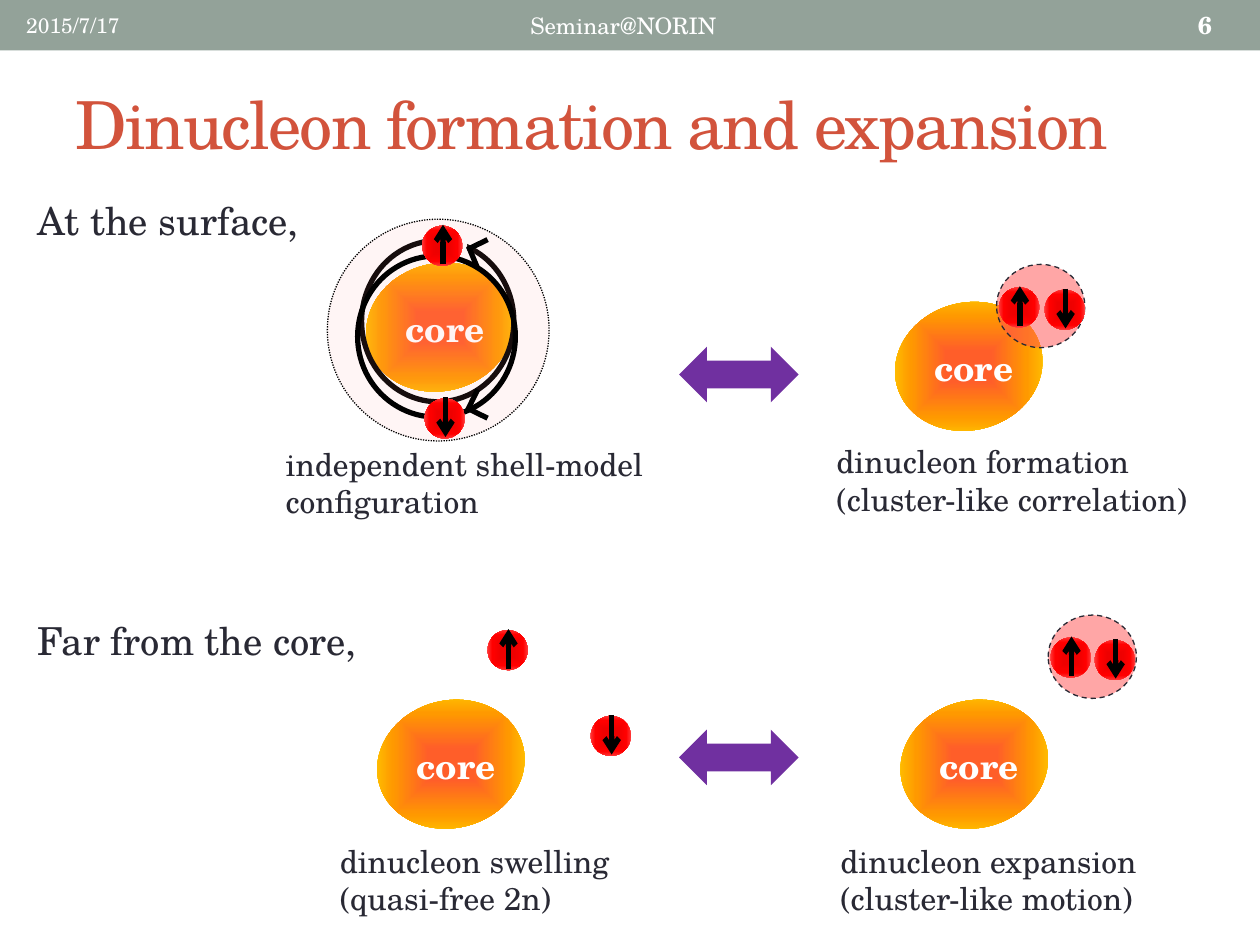
"""Build the slide on dinucleon formation and expansion."""
from lxml import etree
from pptx import Presentation
from pptx.dml.color import RGBColor
from pptx.enum.dml import MSO_LINE
from pptx.enum.shapes import MSO_CONNECTOR, MSO_SHAPE
from pptx.enum.text import MSO_ANCHOR, MSO_AUTO_SIZE, PP_ALIGN
from pptx.oxml import parse_xml
from pptx.oxml.ns import nsdecls, qn
from pptx.util import Cm, Pt

RECT, OVAL, ARROW = MSO_SHAPE.RECTANGLE, MSO_SHAPE.OVAL, MSO_SHAPE.LEFT_RIGHT_ARROW
STRAIGHT = MSO_CONNECTOR.STRAIGHT
DOT, DASH = MSO_LINE.ROUND_DOT, MSO_LINE.DASH
TOP, MIDDLE = MSO_ANCHOR.TOP, MSO_ANCHOR.MIDDLE
LEFT, CENTER = PP_ALIGN.LEFT, PP_ALIGN.CENTER
NO_FIT = MSO_AUTO_SIZE.NONE

FONT = "TeX Gyre Schola"
WHITE = RGBColor(0xFF, 0xFF, 0xFF)
BLACK = RGBColor(0x00, 0x00, 0x00)
INK = RGBColor(0x29, 0x29, 0x34)
SAGE = RGBColor(0x93, 0xA2, 0x99)
RUST = RGBColor(0xD2, 0x53, 0x3C)
PURPLE = RGBColor(0x70, 0x30, 0xA0)
PALE_PINK = RGBColor(0xFF, 0x93, 0x93)
PINK = RGBColor(0xFF, 0x4F, 0x4F)
CORE_STOPS = [(19, RGBColor(0xFF, 0x5E, 0x29)), (63, RGBColor(0xFF, 0x99, 0x00)),
              (93, RGBColor(0xFF, 0xCC, 0x00))]
NUCLEON_STOPS = [(25, RGBColor(0xEE, 0x00, 0x00)), (59, RGBColor(0xFF, 0x00, 0x00)),
                 (91, RGBColor(0xFF, 0x61, 0x61))]

prs = Presentation()
prs.slide_width, prs.slide_height = Cm(25.4), Cm(19.05)
s = prs.slides.add_slide(prs.slide_layouts[5])


def add_shape(kind, box, fill=None, line=None, alpha=None, stops=None, rotation=0):
    sp = s.shapes.add_shape(kind, *map(Cm, box))
    sp.shadow.inherit = False
    sp.rotation = rotation
    if fill is None:
        sp.fill.background()
    else:
        sp.fill.solid()
        sp.fill.fore_color.rgb = fill
    if alpha:
        color = sp.element.spPr.find(".//" + qn("a:srgbClr"))
        etree.SubElement(color, qn("a:alpha"), val=str(alpha * 1000))
    if stops:
        gs = "".join(f'<a:gs pos="{pos * 1000}"><a:srgbClr val="{rgb}"/></a:gs>'
                     for pos, rgb in stops)
        sp.element.spPr.replace(sp.element.spPr.find(qn("a:noFill")), parse_xml(
            f'<a:gradFill {nsdecls("a")} rotWithShape="1"><a:gsLst>{gs}</a:gsLst>'
            '<a:path path="shape"><a:fillToRect l="50000" t="50000" r="50000" b="50000"/>'
            '</a:path></a:gradFill>'))
    if line:
        color, width, dash = line
        sp.line.color.rgb = color
        sp.line.width = Pt(width)
        sp.line.dash_style = dash
    else:
        sp.line.fill.background()


def write(sp, lines, size, color, anchor=TOP, align=LEFT, bold=False):
    tf = sp.text_frame
    for key, value in {"word_wrap": True, "auto_size": NO_FIT,
                       "vertical_anchor": anchor}.items():
        setattr(tf, key, value)
    tf.text = "\n".join(lines)
    for p in tf.paragraphs:
        p.alignment = align
        r = p.runs[0]
        r.font.color.rgb = color
        for key, value in {"name": FONT, "size": Pt(size), "bold": bold}.items():
            setattr(r.font, key, value)


add_shape(RECT, (0, 0, 25.4, 1.02), SAGE)

title = s.shapes.title
for key, value in {"left": 1.27, "top": 1.12, "width": 22.86, "height": 2.74}.items():
    setattr(title, key, Cm(value))
write(title, ["Dinucleon formation and expansion"], 37.8, RUST, MIDDLE)
title.text_frame.paragraphs[0].runs[0].font._element.set("spc", "-100")

for x, width, text, size, align, bold in [
        (0.28, 3.33, "2015/7/17", 12, LEFT, False),
        (5.11, 14.91, "Seminar@NORIN", 13, CENTER, False),
        (23.9, 1.14, "6", 14, LEFT, True)]:
    sp = s.shapes.add_textbox(Cm(x), Cm(0.05), Cm(width), Cm(0.91))
    write(sp, [text], size, WHITE, MIDDLE, align, bold)

for y, text in [(3.84, "At the surface,"), (12.32, "Far from the core,")]:
    sp = s.shapes.add_textbox(Cm(0.51), Cm(y), Cm(7.54), Cm(1.19))
    write(sp, [text], 22, INK)

for x, y, lines in [
        (5.51, 8.84, ["independent shell-model configuration"]),
        (16.61, 8.79, ["dinucleon formation", "(cluster-like correlation)"]),
        (6.6, 16.84, ["dinucleon swelling", "(quasi-free 2n)"]),
        (16.69, 16.84, ["dinucleon expansion", "(cluster-like motion)"])]:
    sp = s.shapes.add_textbox(Cm(x), Cm(y), Cm(8.45), Cm(1.8))
    write(sp, lines, 18, INK)

for y in (6.99, 14.71):
    add_shape(ARROW, (13.69, y, 2.41, 1.12), PURPLE)

strokes = [(9.83, 4.83, 9.42, 5.03, False), (9.45, 4.98, 9.63, 5.41, False),
           (9.83, 8.43, 9.42, 8.23, False), (9.42, 8.28, 9.63, 7.85, False)]
spins = []

add_shape(RECT, (8.89, 4.78, 0.53, 0.3), WHITE)
for x, y in [(7.37, 5.31), (18.03, 6.1), (7.59, 14.12), (18.14, 14.12)]:
    add_shape(OVAL, (x, y, 3, 2.57), stops=CORE_STOPS, rotation=345.1)
    sp = s.shapes.add_textbox(Cm(x + 0.55), Cm(y + 0.76), Cm(2.41), Cm(0.99))
    write(sp, ["core"], 20, WHITE, bold=True)

add_shape(OVAL, (7.29, 4.85, 3.07, 3.25), line=(BLACK, 3, None))
for gap in [(8.48, 8.26, 0.3, 0.64), (9.17, 8.28, 0.25, 0.46),
            (8.53, 4.37, 0.28, 0.64), (9.14, 4.45, 0.28, 0.64)]:
    add_shape(RECT, gap, WHITE)
add_shape(OVAL, (6.6, 4.42, 4.47, 4.47), PALE_PINK, (BLACK, 0.75, DOT), alpha=9)
add_shape(OVAL, (7.21, 5.16, 3.18, 3.25), line=(BLACK, 3, None))

for x, y in [(20.09, 5.33), (21.13, 12.4)]:
    add_shape(OVAL, (x, y, 1.78, 1.68), PINK, (INK, 0.75, DASH), alpha=50)

for x, y, up in [(8.51, 4.55, True), (8.56, 8.03, False),
                 (20.14, 5.79, True), (21.06, 5.84, False),
                 (9.83, 12.7, True), (11.91, 14.43, False),
                 (21.18, 12.85, True), (22.07, 12.9, False)]:
    add_shape(OVAL, (x, y, 0.81, 0.81), stops=NUCLEON_STOPS, rotation=248.3)
    ends = (y + 0.78, y - 0.02) if up else (y - 0.02, y + 0.78)
    spins.append((x + 0.42, ends[0], x + 0.42, ends[1], True))

for *ends, pointed in strokes + spins:
    c = s.shapes.add_connector(STRAIGHT, *map(Cm, ends))
    c.line.color.rgb = BLACK
    c.line.width = Pt(3)
    if pointed:
        etree.SubElement(c.element.spPr.find(qn("a:ln")), qn("a:tailEnd"), type="arrow")
    etree.SubElement(c.element.spPr, qn("a:effectLst"))

prs.save("out.pptx")
